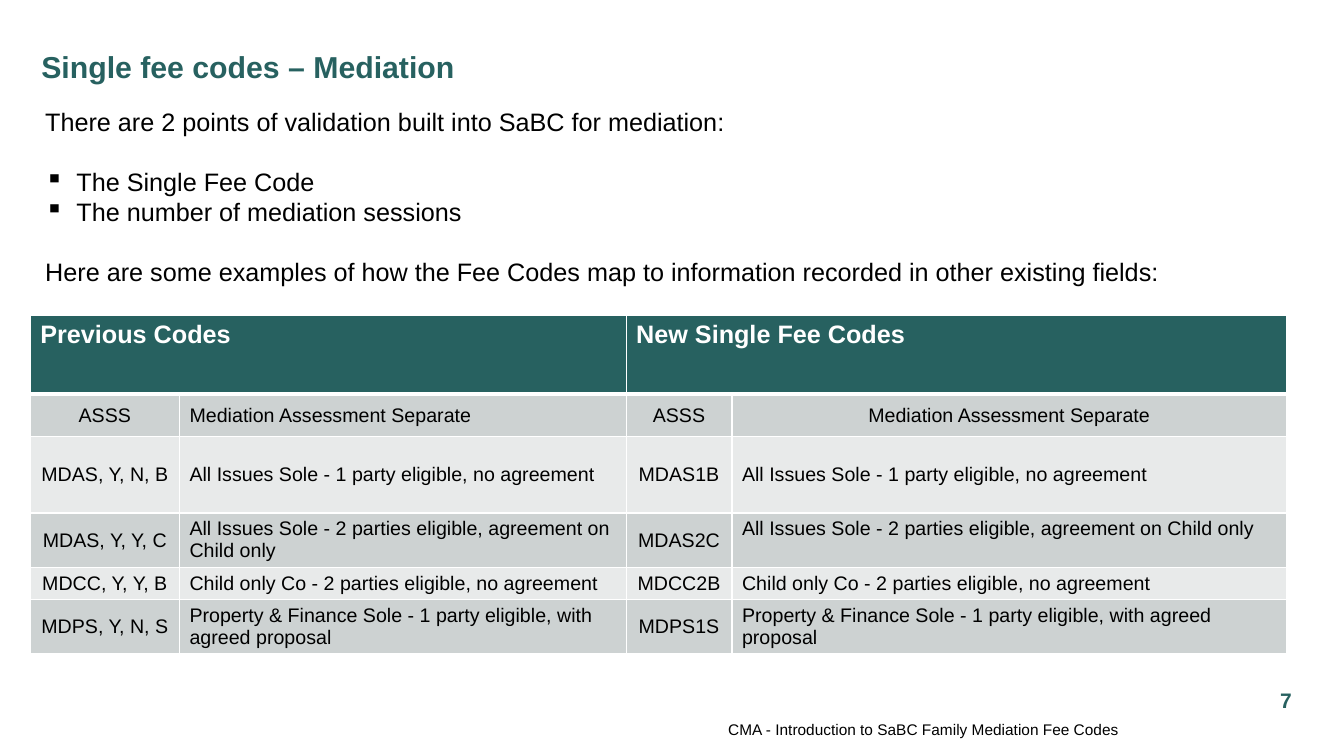
from dataclasses import dataclass
from typing import Any

import lxml.etree
import pptx
import pptx.dml.color
import pptx.enum.text
import pptx.oxml.ns
import pptx.util

Align = pptx.enum.text.PP_ALIGN
Anchor = pptx.enum.text.MSO_ANCHOR
EMU_PER_PX = 9144


@dataclass(frozen=True)
class Theme:
    font: str = "Arial"
    green: str = "276160"
    white: str = "FFFFFF"
    black: str = "000000"
    bands: tuple[str, str] = ("CDD2D2", "E8EAEA")
    title: float = 21.6
    body: float = 18
    cell: float = 14
    number: float = 15
    footer: float = 11
    blank_line: float = 21


@dataclass(frozen=True)
class Label:
    text: str
    frame: tuple[int, int, int, int]
    size: float
    color: str
    bold: bool
    align: Align


@dataclass(frozen=True)
class Line:
    text: str
    bullet: bool = False
    gap: bool = False


@dataclass(frozen=True)
class FeeRow:
    height: int
    previous_code: str
    new_code: str
    meaning: str
    align: Align = Align.LEFT
    anchor: Anchor = Anchor.MIDDLE


THEME = Theme()
TITLE = Label("Single fee codes – Mediation", (41, 50, 1173, 31), THEME.title, THEME.green, True, Align.LEFT)
LABELS = [
    Label("7", (1251, 675, 49, 40), THEME.number, THEME.green, True, Align.CENTER),
    Label("CMA - Introduction to SaBC Family Mediation Fee Codes", (322, 714, 788, 20),
          THEME.footer, THEME.black, False, Align.RIGHT),
]
LINES = [
    Line("There are 2 points of validation built into SaBC for mediation:"),
    Line("The Single Fee Code", bullet=True, gap=True),
    Line("The number of mediation sessions", bullet=True),
    Line("Here are some examples of how the Fee Codes map to information recorded in other existing fields:", gap=True),
]
HEADER_HEIGHT = 78
HEADERS = ["Previous Codes", "New Single Fee Codes"]
COLUMNS = [148, 443, 105, 550]
FEE_ROWS = [
    FeeRow(42, "ASSS", "ASSS", "Mediation Assessment Separate", align=Align.CENTER),
    FeeRow(76, "MDAS, Y, N, B", "MDAS1B", "All Issues Sole - 1 party eligible, no agreement"),
    FeeRow(54, "MDAS, Y, Y, C", "MDAS2C", "All Issues Sole - 2 parties eligible, agreement on Child only",
           anchor=Anchor.TOP),
    FeeRow(32, "MDCC, Y, Y, B", "MDCC2B", "Child only Co - 2 parties eligible, no agreement"),
    FeeRow(54, "MDPS, Y, N, S", "MDPS1S", "Property & Finance Sole - 1 party eligible, with agreed proposal"),
]


def px(length: int) -> pptx.util.Emu:
    return pptx.util.Emu(length * EMU_PER_PX)


def rgb(color: str) -> pptx.dml.color.RGBColor:
    return pptx.dml.color.RGBColor.from_string(color)


def style(para: Any, size: float, color: str, bold: bool = False, align: Align = Align.LEFT) -> None:
    para.alignment = align
    para.font.name = THEME.font
    para.font.size = pptx.util.Pt(size)
    para.font.bold = bold
    para.font.color.rgb = rgb(color)


def clear_margins(holder: Any) -> None:
    holder.margin_left = holder.margin_right = holder.margin_top = holder.margin_bottom = 0


def fill_label(box: Any, label: Label) -> None:
    box.left, box.top, box.width, box.height = map(px, label.frame)
    frame = box.text_frame
    frame.text = label.text
    frame.word_wrap = True
    frame.auto_size = pptx.enum.text.MSO_AUTO_SIZE.NONE
    frame.vertical_anchor = Anchor.MIDDLE
    clear_margins(frame)
    style(frame.paragraphs[0], label.size, label.color, label.bold, label.align)


def add_bullet(para: Any) -> None:
    properties = para._p.get_or_add_pPr()
    properties.set("marL", str(px(31)))
    properties.set("indent", str(px(-31)))
    bullet = lxml.etree.SubElement(properties, pptx.oxml.ns.qn("a:buChar"))
    bullet.set("char", "▪")


def add_body(page: Any) -> None:
    frame = page.shapes.add_textbox(px(35), px(101), px(1143), px(192)).text_frame
    frame.word_wrap = True
    for index, line in enumerate(LINES):
        para = frame.add_paragraph() if index else frame.paragraphs[0]
        para.text = line.text
        if line.gap:
            para.space_before = pptx.util.Pt(THEME.blank_line)
        if line.bullet:
            add_bullet(para)
        style(para, THEME.body, THEME.black)


def paint_cell(cell: Any, color: str, top: float, bottom: float) -> None:
    properties = cell._tc.get_or_add_tcPr()
    for side, width in {"L": 1, "R": 1, "T": top, "B": bottom}.items():
        border = lxml.etree.SubElement(properties, pptx.oxml.ns.qn(f"a:ln{side}"))
        border.set("w", str(pptx.util.Pt(width)))
        solid = lxml.etree.SubElement(border, pptx.oxml.ns.qn("a:solidFill"))
        lxml.etree.SubElement(solid, pptx.oxml.ns.qn("a:srgbClr")).set("val", THEME.white)
    cell.fill.solid()
    cell.fill.fore_color.rgb = rgb(color)


def add_fee_table(page: Any) -> None:
    heights = [HEADER_HEIGHT] + [fee.height for fee in FEE_ROWS]
    table = page.shapes.add_table(
        len(heights), len(COLUMNS), px(30), px(313), px(sum(COLUMNS)), px(sum(heights))
    ).table
    table.first_row = table.horz_banding = False
    for column, width in zip(table.columns, COLUMNS):
        column.width = px(width)
    for row, height in zip(table.rows, heights):
        row.height = px(height)

    for column in range(len(COLUMNS)):
        paint_cell(table.cell(0, column), THEME.green, 1, 3)
    for index, header in enumerate(HEADERS):
        cell = table.cell(0, 2 * index)
        cell.merge(table.cell(0, 2 * index + 1))
        cell.text = header
        style(cell.text_frame.paragraphs[0], THEME.body, THEME.white, bold=True)

    for row, fee in enumerate(FEE_ROWS, start=1):
        texts = [fee.previous_code, fee.meaning, fee.new_code, fee.meaning]
        aligns = [Align.CENTER, Align.LEFT, Align.CENTER, fee.align]
        for column, (text, align) in enumerate(zip(texts, aligns)):
            cell = table.cell(row, column)
            is_code = column % 2 == 0
            cell.text = text
            cell.vertical_anchor = Anchor.MIDDLE if is_code else fee.anchor
            if is_code:
                clear_margins(cell)
            paint_cell(cell, THEME.bands[(row - 1) % 2], 3 if row == 1 else 1, 1)
            style(cell.text_frame.paragraphs[0], THEME.cell, THEME.black, align=align)


def main() -> None:
    deck = pptx.Presentation()
    deck.slide_width, deck.slide_height = px(1333), px(750)
    page = deck.slides.add_slide(deck.slide_layouts.get_by_name("Title Only"))
    fill_label(page.shapes.title, TITLE)
    add_fee_table(page)
    add_body(page)
    for label in LABELS:
        fill_label(page.shapes.add_textbox(*map(px, label.frame)), label)
    deck.save("out.pptx")


if __name__ == "__main__":
    main()
